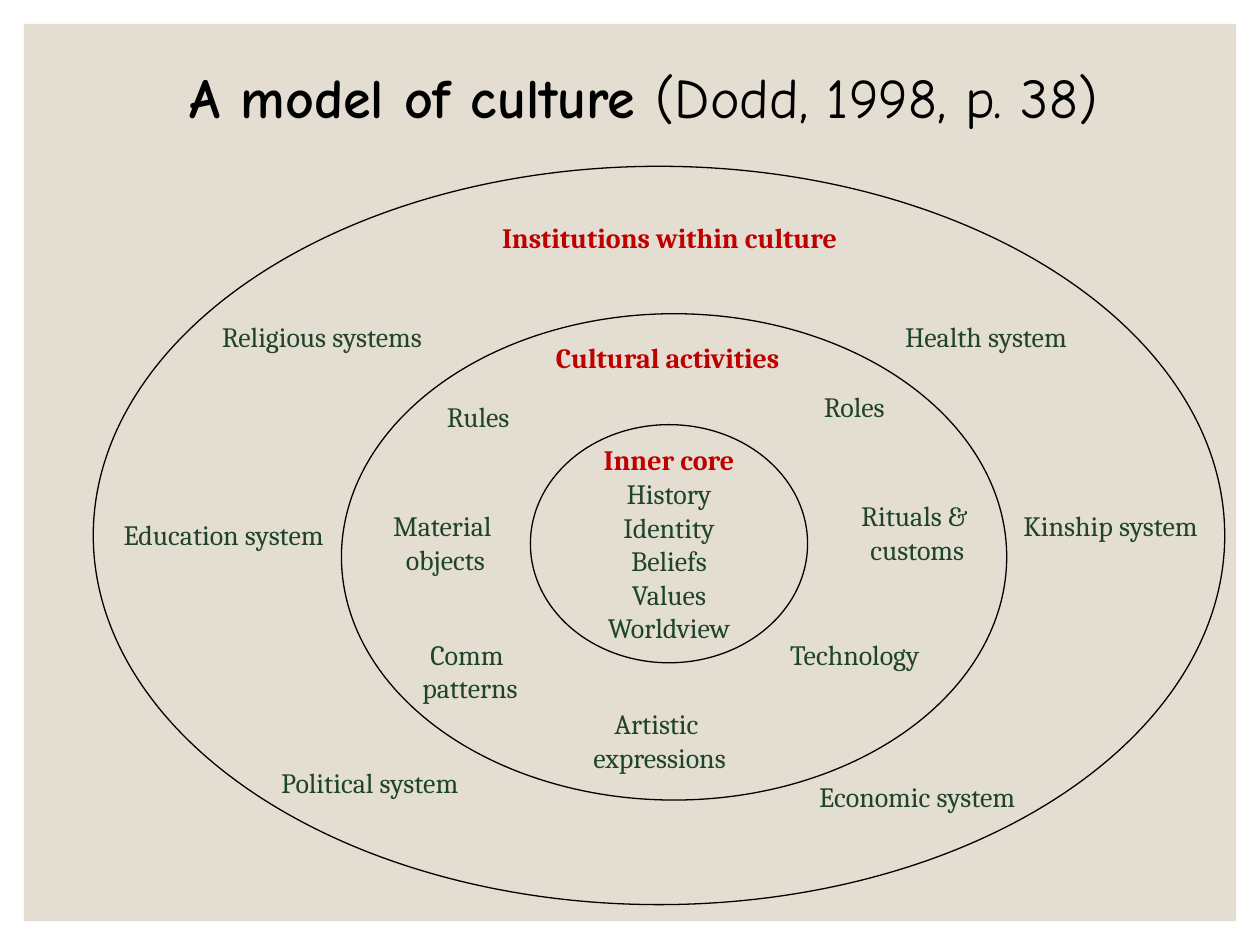
from pptx import Presentation
from pptx import util as u
from pptx.dml.color import RGBColor
from pptx.enum import shapes, text

PX = u.Inches(1) // 100
RED, GREEN, BLACK, SAND = "C00000", "1F442A", "000000", "E3DED1"

OUTER_LABELS = [
    ("Religious systems", 79, 117, 205),
    ("Health system", 623, 117, 171),
    ("Education system", 1, 274, 205),
    ("Kinship system", 717, 267, 181),
    ("Political system", 127, 471, 185),
    ("Economic system", 555, 482, 198),
]
ACTIVITY_LABELS = [
    ("Rules", 69, 63, 79),
    ("Roles", 369, 55, 76),
    ("Material \nobjects", 24, 150, 117),
    ("Artistic \nexpressions", 182, 307, 141),
    ("Comm \npatterns", 48, 252, 108),
    ("Rituals & \ncustoms", 394, 142, 126),
    ("Technology", 339, 252, 137),
]
CORE_ITEMS = ["History", "Identity", "Beliefs", "Values", "Worldview"]


def color(value):
    return RGBColor.from_string(value)


def emu(*lengths):
    return [n * PX for n in lengths]


def style(p, hex_color, bold=False, size=16, name="Cambria"):
    p.alignment = text.PP_ALIGN.CENTER
    p.font.size = u.Pt(size)
    p.font.name = name
    p.font.bold = bold
    p.font.color.rgb = color(hex_color)


def add_panel(s, box):
    sp = s.shapes.add_shape(shapes.MSO_SHAPE.RECTANGLE, *emu(*box))
    sp.shadow.inherit = False
    sp.fill.solid()
    sp.fill.fore_color.rgb = color(SAND)
    sp.line.fill.background()
    s.shapes._spTree.insert(2, sp._element)


def add_title(s, box):
    sp = s.shapes.title
    sp.left, sp.top, sp.width, sp.height = emu(*box)
    tf = sp.text_frame
    tf.auto_size = text.MSO_AUTO_SIZE.NONE
    tf.vertical_anchor = text.MSO_ANCHOR.MIDDLE
    p = tf.paragraphs[0]
    p.line_spacing = 0.9
    style(p, BLACK, size=32, name="Comic Neue")
    for words, bold in (("A model of culture ", True), ("(Dodd, 1998, p. 38)", False)):
        r = p.add_run()
        r.text = words
        r.font.bold = bold


def add_ellipse(s, box):
    sp = s.shapes.add_shape(shapes.MSO_SHAPE.OVAL, *emu(*box))
    sp.shadow.inherit = False
    sp.fill.background()
    sp.line.color.rgb = color(BLACK)
    sp.line.width = u.Pt(0.75)
    return sp


def add_label(s, words, left, top, width, hex_color=GREEN, bold=False):
    height = 10 + 27 * len(words.split("\n"))
    tf = s.shapes.add_textbox(*emu(left, top, width, height)).text_frame
    tf.word_wrap = False
    tf.auto_size = text.MSO_AUTO_SIZE.SHAPE_TO_FIT_TEXT
    tf.text = words
    for p in tf.paragraphs:
        style(p, hex_color, bold)


def add_ring(s, box, heading, labels):
    add_ellipse(s, box)
    x, y = box[:2]
    words, left, top, width = heading
    add_label(s, words, x + left, y + top, width, RED, True)
    for words, left, top, width in labels:
        add_label(s, words, x + left, y + top, width)


def add_core(s, box, heading, items):
    tf = add_ellipse(s, box).text_frame
    tf.word_wrap = False
    tf.vertical_anchor = text.MSO_ANCHOR.MIDDLE
    tf.text = "\n".join([heading] + items)
    style(tf.paragraphs[0], RED, True)
    for p in tf.paragraphs[1:]:
        style(p, GREEN)


def main():
    prs = Presentation()
    prs.slide_width, prs.slide_height = emu(1000, 750)
    s = prs.slides.add_slide(prs.slide_layouts[5])
    add_panel(s, (19, 19, 962, 712))
    add_title(s, (74, 41, 874, 77))
    add_ring(s, (74, 132, 898, 586),
             ("Institutions within culture", 291, 38, 333), OUTER_LABELS)
    add_ring(s, (271, 249, 528, 386),
             ("Cultural activities", 142, 16, 234), ACTIVITY_LABELS)
    add_core(s, (421, 337, 220, 189), "Inner core", CORE_ITEMS)
    prs.save("out.pptx")


if __name__ == "__main__":
    main()
